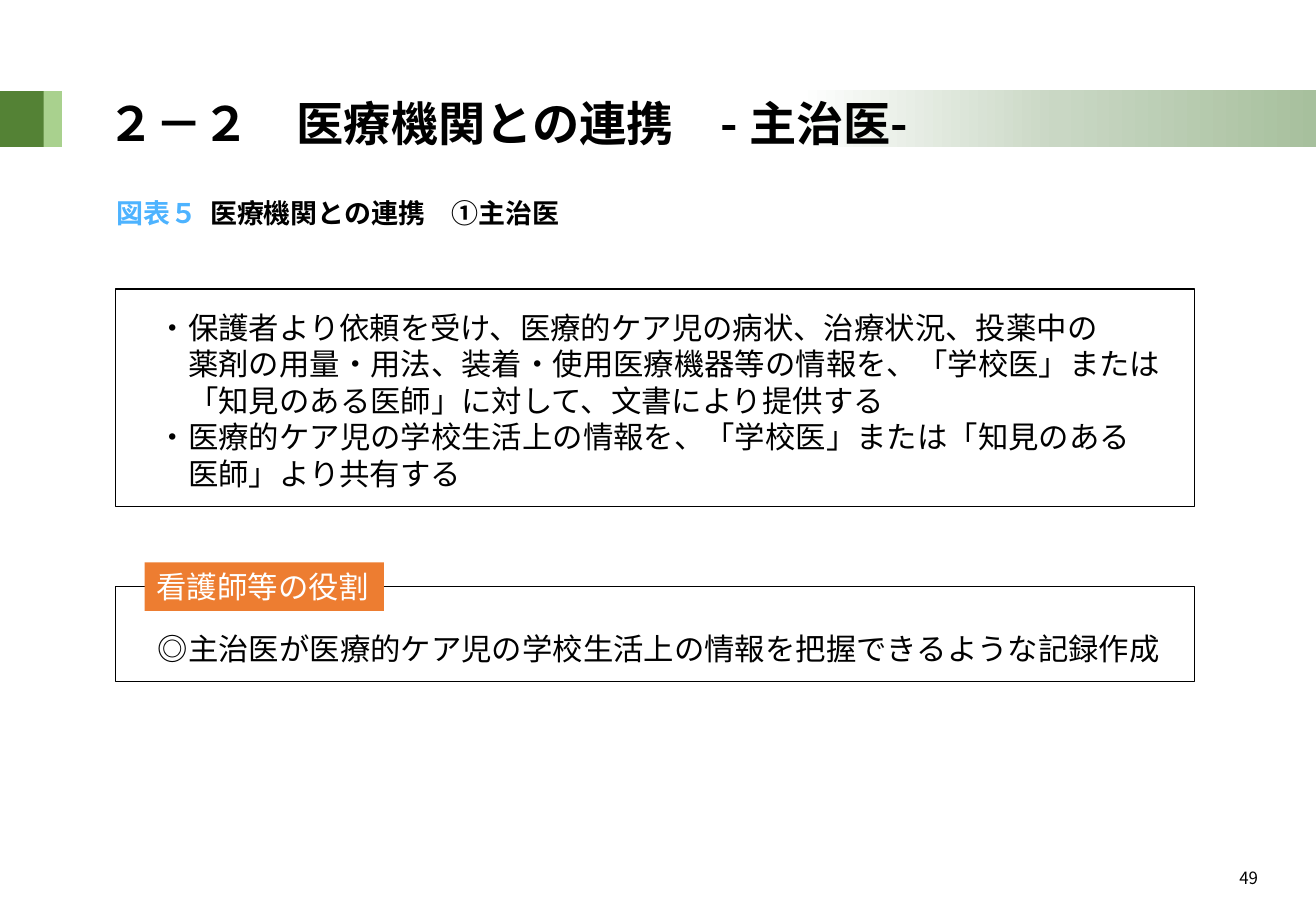
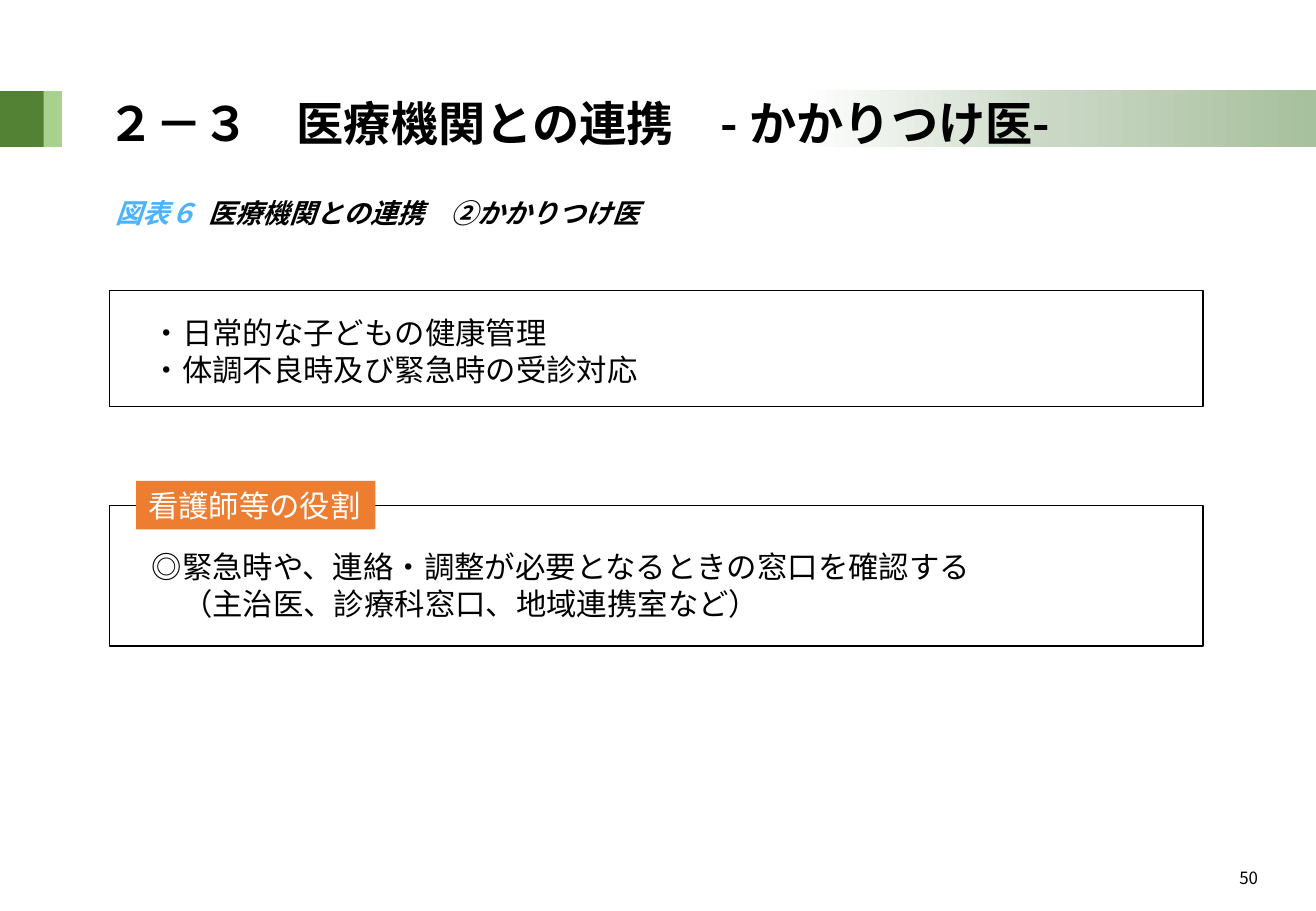
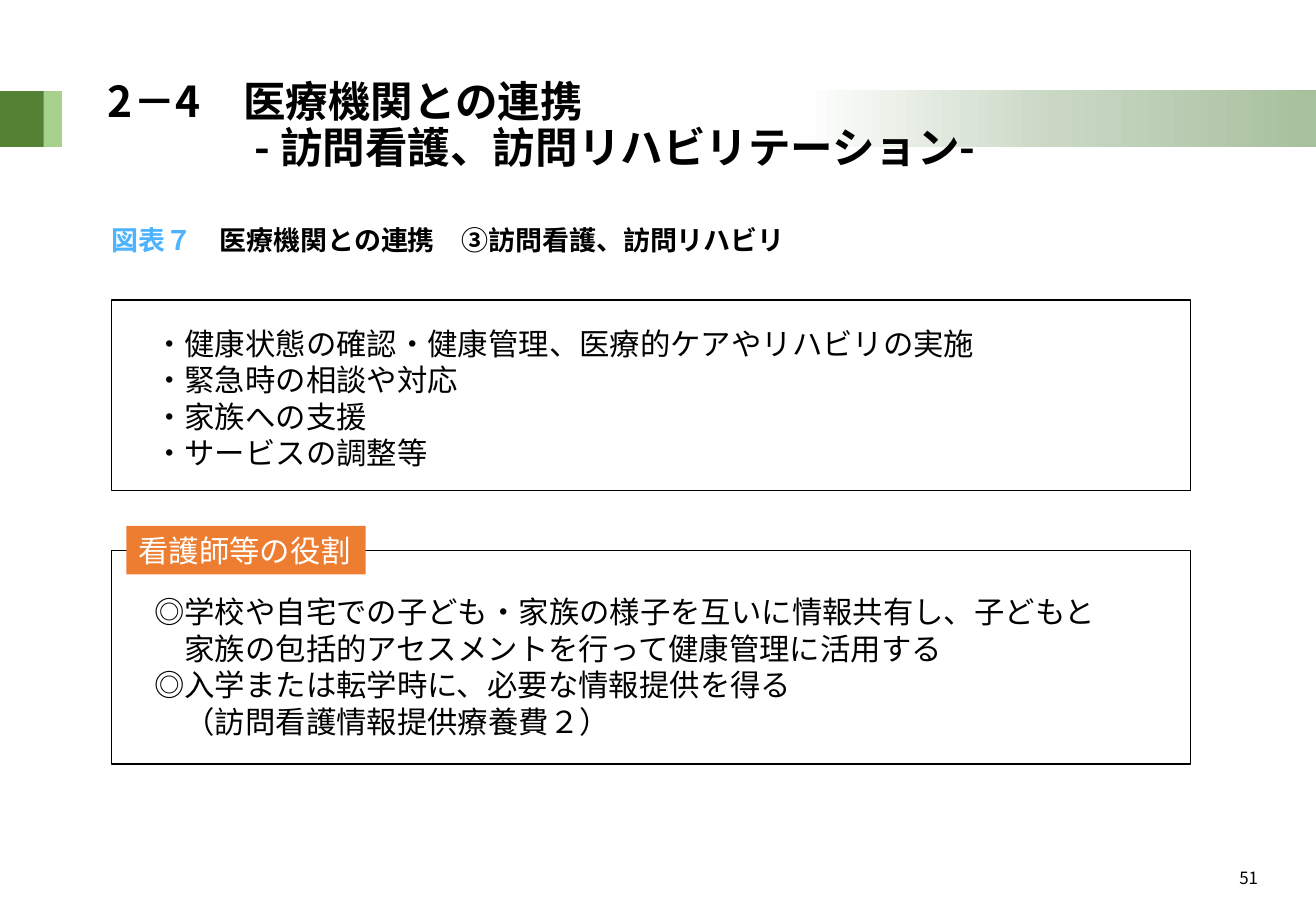
import copy

import pptx
import pptx.dml.color
import pptx.enum.shapes
import pptx.enum.text
import pptx.oxml.ns
import pptx.util

qn = pptx.oxml.ns.qn
Inches = pptx.util.Inches
Pt = pptx.util.Pt
MIDDLE = pptx.enum.text.MSO_ANCHOR.MIDDLE
TOP = pptx.enum.text.MSO_ANCHOR.TOP


def rgb(value):
    return pptx.dml.color.RGBColor.from_string(value)


class Deck:
    FONT = "Noto Sans CJK JP"
    BLACK, WHITE = "000000", "FFFFFF"
    DARK_GREEN, LIGHT_GREEN = "548235", "A9D18E"
    ORANGE, BLUE = "ED7D31", "4DB3FF"
    BAND = ("A7C09D", "C9D7C4", "FFFFFF")
    EM = 0.25  # width of one 18 pt character

    def __init__(self):
        self.prs = pptx.Presentation()
        self.prs.slide_width = Inches(10.83)
        self.prs.slide_height = Inches(7.5)
        self.s = None

    # Basic parts
    def rect(self, x, y, w, h, fill=None, line=None):
        sp = self.s.shapes.add_shape(
            pptx.enum.shapes.MSO_SHAPE.RECTANGLE,
            Inches(x), Inches(y), Inches(w), Inches(h))
        sp.shadow.inherit = False
        if fill:
            sp.fill.solid()
            sp.fill.fore_color.rgb = rgb(fill)
        else:
            sp.fill.background()
        if line:
            sp.line.color.rgb = rgb(line)
            sp.line.width = Pt(0.75)
        else:
            sp.line.fill.background()
        return sp

    def textbox(self, x, y, w, h):
        return self.s.shapes.add_textbox(Inches(x), Inches(y), Inches(w), Inches(h))

    def frame(self, sp, anchor=TOP, left=0.1, top=0.05, bottom=0.05):
        tf = sp.text_frame
        tf.word_wrap = True
        tf.vertical_anchor = anchor
        tf.margin_left, tf.margin_right = Inches(left), Inches(0.1)
        tf.margin_top, tf.margin_bottom = Inches(top), Inches(bottom)
        return tf

    def style(self, r, size, color=BLACK, bold=False, italic=False):
        r.font.name = self.FONT
        r.font.size = Pt(size)
        r.font.bold, r.font.italic = bold, italic
        r.font.color.rgb = rgb(color)
        rPr = r._r.get_or_add_rPr()
        ea = rPr.makeelement(qn("a:ea"), {"typeface": self.FONT})
        rPr.find(qn("a:latin")).addnext(ea)

    def put_text(self, tf, text, size, color=BLACK, bold=False):
        tf.text = text
        for p in tf.paragraphs:
            p.alignment = pptx.enum.text.PP_ALIGN.LEFT
            for r in p.runs:
                self.style(r, size, color, bold)

    def indent(self, p, left, first=0):
        pPr = p._p.get_or_add_pPr()
        pPr.set("marL", str(Inches(left)))
        pPr.set("indent", str(Inches(first)))

    # Shared page furniture
    def new_slide(self, number):
        self.s = self.prs.slides.add_slide(self.prs.slide_layouts[6])
        self.rect(0, 0.75, 0.38, 0.46, self.DARK_GREEN)
        self.rect(0.36, 0.75, 0.15, 0.46, self.LIGHT_GREEN)
        self.band()
        tf = self.frame(self.textbox(10.1, 7.09, 0.45, 0.27))
        self.put_text(tf, str(number), 10)

    def band(self):
        sp = self.rect(6.58, 0.74, 4.25, 0.47)
        sp.fill.gradient()
        sp.fill.gradient_angle = 180
        stops = sp._element.spPr.find(qn("a:gradFill")).find(qn("a:gsLst"))
        stops.insert(1, copy.deepcopy(stops[0]))
        for i, stop in enumerate(sp.fill.gradient_stops):
            stop.position = i / 2
            stop.color.rgb = rgb(self.BAND[i])

    # Content parts
    def title(self, text, size=28, second_line_indent=0):
        tf = self.frame(self.textbox(0.79, 0.72, 9.34, 0.64), MIDDLE)
        self.put_text(tf, text, size, bold=True)
        for p in tf.paragraphs:
            p.line_spacing = 0.9
        for p in tf.paragraphs[1:]:
            self.indent(p, second_line_indent)

    def caption(self, x, y, label, text, tab=0.77, italic=False):
        tf = self.frame(self.textbox(x, y, 6.8, 0.37), left=0)
        p = tf.paragraphs[0]
        for part, color in ((label + "\t", self.BLUE), (text, self.BLACK)):
            r = p.add_run()
            r.text = part
            self.style(r, 16, color, True, italic)
        pPr = p._p.get_or_add_pPr()
        tabs = pPr.makeelement(qn("a:tabLst"), {})
        tabs.append(tabs.makeelement(
            qn("a:tab"), {"pos": str(Inches(tab)), "algn": "l"}))
        pPr.append(tabs)

    def panel(self, x, y, w, h, items, top, bottom):
        sp = self.rect(x, y, w, h, line=self.BLACK)
        tf = self.frame(sp, MIDDLE, top=top, bottom=bottom)
        self.put_text(tf, "\n".join(items), 18)
        for p in tf.paragraphs:
            self.indent(p, 2 * self.EM, -self.EM)

    def role_panel(self, x, y, w, h, items, bottom, label_x):
        self.panel(x, y, w, h, items, 0.35, bottom)
        sp = self.rect(label_x, y - 0.2, 1.97, 0.4, self.ORANGE)
        self.put_text(self.frame(sp, MIDDLE), "看護師等の役割", 18, self.WHITE)


def main():
    d = Deck()

    # Attending physician
    d.new_slide(49)
    d.title("２－２　医療機関との連携　- 主治医-")
    d.caption(0.96, 1.57, "図表５", "医療機関との連携　①主治医")
    d.panel(0.95, 2.38, 8.88, 1.79, [
        "・保護者より依頼を受け、医療的ケア児の病状、治療状況、投薬中の"
        "\v薬剤の用量・用法、装着・使用医療機器等の情報を、「学校医」または"
        "\v「知見のある医師」に対して、文書により提供する",
        "・医療的ケア児の学校生活上の情報を、「学校医」または「知見のある"
        "\v医師」より共有する",
    ], 0.16, 0.12)
    d.role_panel(0.95, 4.83, 8.88, 0.78, [
        "◎主治医が医療的ケア児の学校生活上の情報を把握できるような記録作成",
    ], 0.12, 1.19)

    # Family doctor
    d.new_slide(50)
    d.title("２－３　医療機関との連携　- かかりつけ医-")
    d.caption(0.95, 1.57, "図表６", "医療機関との連携　②かかりつけ医", italic=True)
    d.panel(0.9, 2.39, 9, 0.96, [
        "・日常的な子どもの健康管理",
        "・体調不良時及び緊急時の受診対応",
    ], 0.2, 0.16)
    d.role_panel(0.9, 4.16, 9, 1.16, [
        "◎緊急時や、連絡・調整が必要となるときの窓口を確認する"
        "\v（主治医、診療科窓口、地域連携室など）",
    ], 0.2, 1.12)

    # Home nursing and rehabilitation
    d.new_slide(51)
    d.title("2－4　医療機関との連携\n- 訪問看護、訪問リハビリテーション-", 25.2, 1.21)
    d.caption(0.92, 1.79, "図表７", "医療機関との連携　③訪問看護、訪問リハビリ", 0.89)
    d.panel(0.92, 2.47, 8.88, 1.57, [
        "・健康状態の確認・健康管理、医療的ケアやリハビリの実施",
        "・緊急時の相談や対応",
        "・家族への支援",
        "・サービスの調整等",
    ], 0.2, 0.16)
    d.role_panel(0.92, 4.53, 8.88, 1.76, [
        "◎学校や自宅での子ども・家族の様子を互いに情報共有し、子どもと"
        "\v家族の包括的アセスメントを行って健康管理に活用する",
        "◎入学または転学時に、必要な情報提供を得る"
        "\v（訪問看護情報提供療養費２）",
    ], 0.2, 1.04)

    d.prs.save("out.pptx")


if __name__ == "__main__":
    main()
